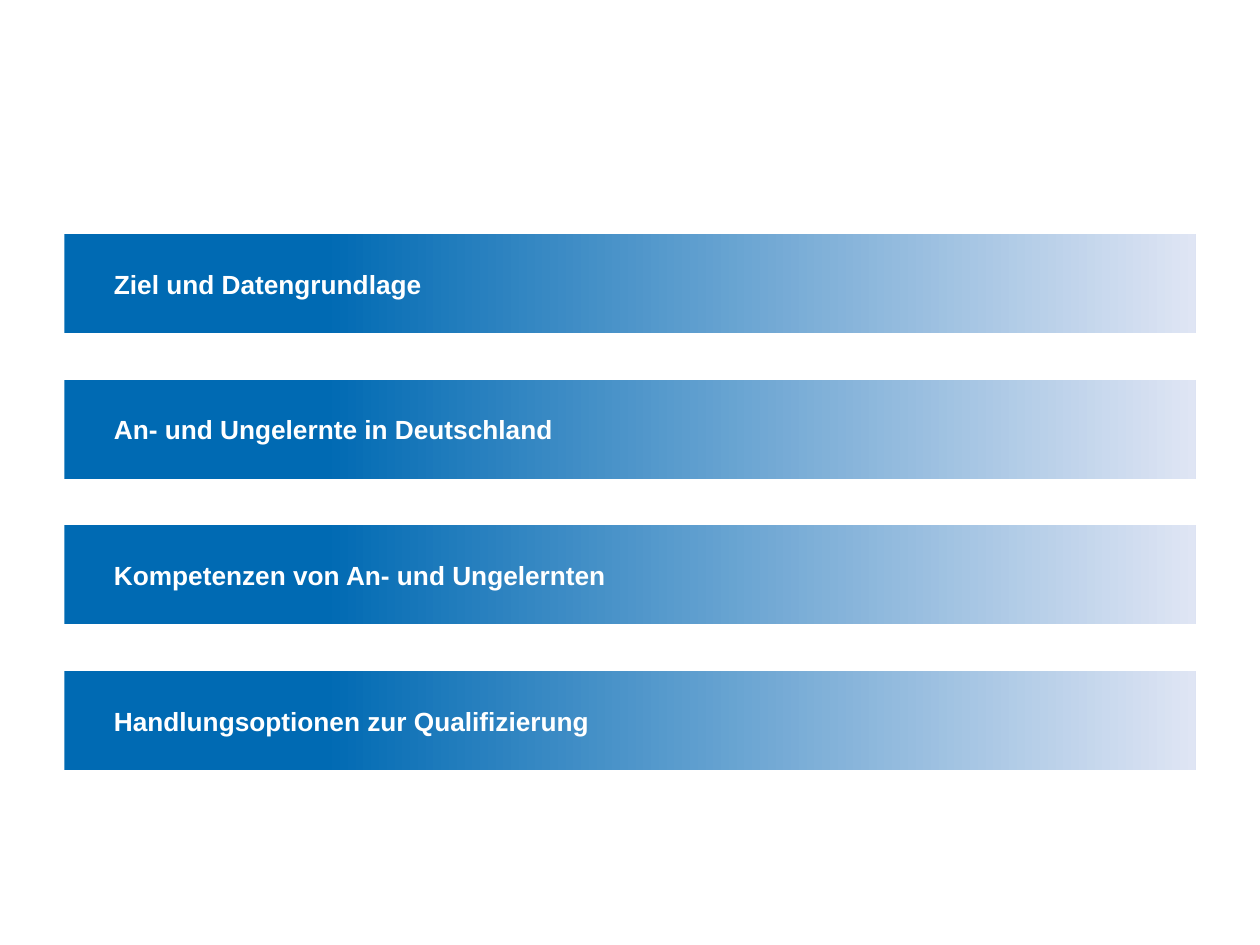
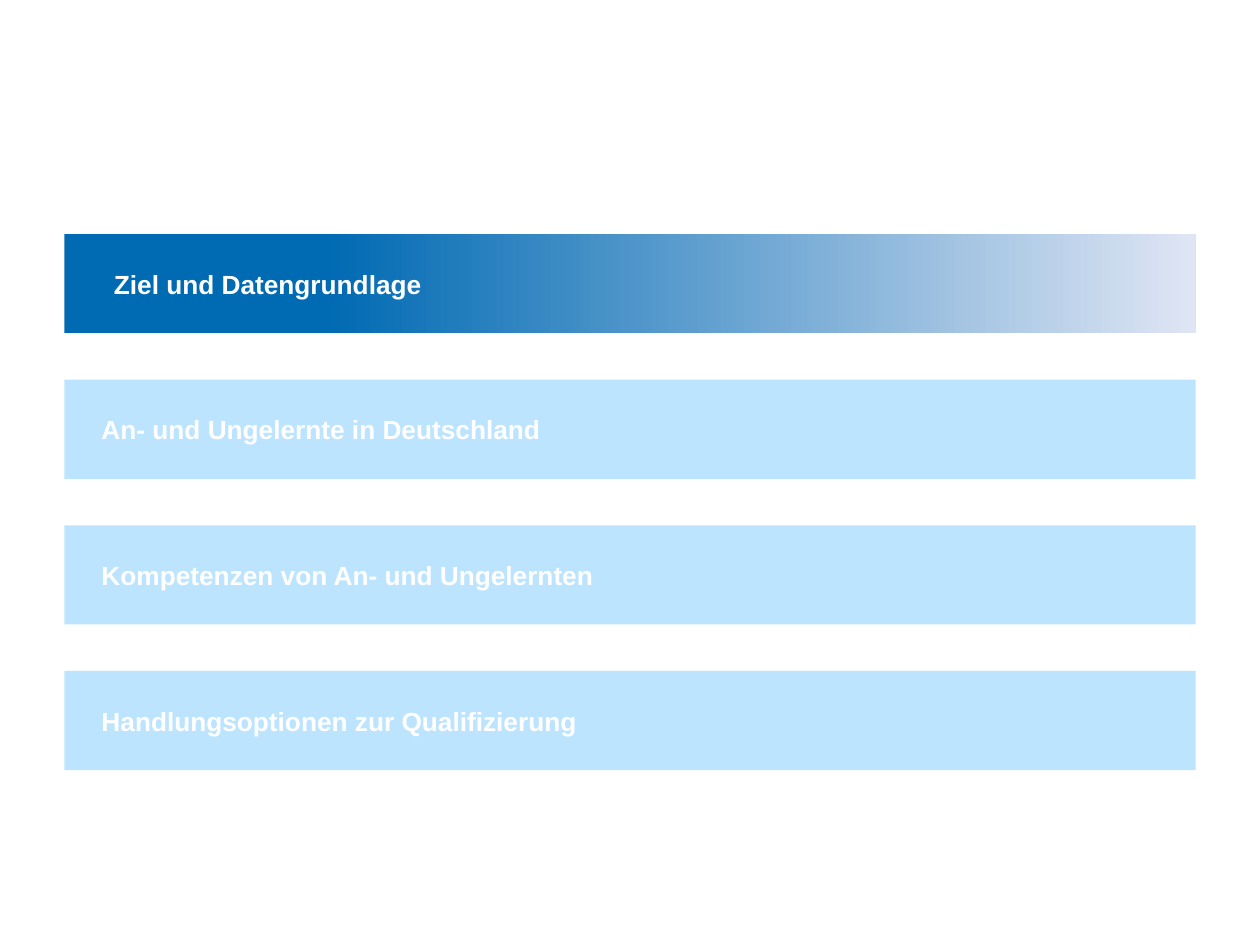
import pptx
import pptx.dml.color
import pptx.enum.shapes
import pptx.enum.text
import pptx.util

Pt = pptx.util.Pt
RGBColor = pptx.dml.color.RGBColor

# Content: the agenda, and which topics each slide highlights
TOPICS = [
    "Ziel und Datengrundlage",
    "An- und Ungelernte in Deutschland",
    "Kompetenzen von An- und Ungelernten",
    "Handlungsoptionen zur Qualifizierung",
]
HIGHLIGHTED = [TOPICS, TOPICS[:1]]

# Shared style
DEEP_BLUE = RGBColor(0x00, 0x6A, 0xB3)
PALE_BLUE = RGBColor(0xDF, 0xE5, 0xF4)
MUTED_BLUE = RGBColor(0xBD, 0xE4, 0xFF)
WHITE = RGBColor(0xFF, 0xFF, 0xFF)
FADE = [(0.23, DEEP_BLUE), (1.0, PALE_BLUE)]
FONT, FONT_SIZE = "Arial", 15

# Layout in points
SLIDE_WIDTH, SLIDE_HEIGHT = 720, 540
MARGIN, FIRST_TOP = 36.75, 133.8
BAR_WIDTH, BAR_HEIGHT = SLIDE_WIDTH - 2 * MARGIN, 56.7
BAR_PITCH = 83.2
HIGHLIGHT_INDENT, MUTED_INDENT = 28.35, 21.26


def add_topic_bar(slide, topic, top, highlighted):
    bar = slide.shapes.add_shape(
        pptx.enum.shapes.MSO_SHAPE.RECTANGLE,
        Pt(MARGIN), Pt(top), Pt(BAR_WIDTH), Pt(BAR_HEIGHT))
    bar.shadow.inherit = False
    bar.line.fill.background()

    # Fading fill for highlighted topics, flat fill for the others
    if highlighted:
        bar.fill.gradient()
        bar.fill.gradient_angle = 0
        for stop, (position, color) in zip(bar.fill.gradient_stops, FADE):
            stop.position = position
            stop.color.rgb = color
    else:
        bar.fill.solid()
        bar.fill.fore_color.rgb = MUTED_BLUE

    # Label
    label = bar.text_frame
    label.word_wrap = True
    label.vertical_anchor = pptx.enum.text.MSO_ANCHOR.MIDDLE
    label.margin_left = Pt(HIGHLIGHT_INDENT if highlighted else MUTED_INDENT)
    label.margin_top = label.margin_right = label.margin_bottom = 0
    label.text = topic
    paragraph = label.paragraphs[0]
    paragraph.alignment = pptx.enum.text.PP_ALIGN.LEFT
    font = paragraph.runs[0].font
    font.name, font.size, font.bold = FONT, Pt(FONT_SIZE), True
    font.color.rgb = WHITE


def main():
    deck = pptx.Presentation()
    deck.slide_width, deck.slide_height = Pt(SLIDE_WIDTH), Pt(SLIDE_HEIGHT)
    blank = deck.slide_layouts[6]
    for highlighted_topics in HIGHLIGHTED:
        slide = deck.slides.add_slide(blank)
        for row, topic in enumerate(TOPICS):
            add_topic_bar(slide, topic, FIRST_TOP + row * BAR_PITCH,
                          topic in highlighted_topics)
    deck.save("out.pptx")


if __name__ == "__main__":
    main()
